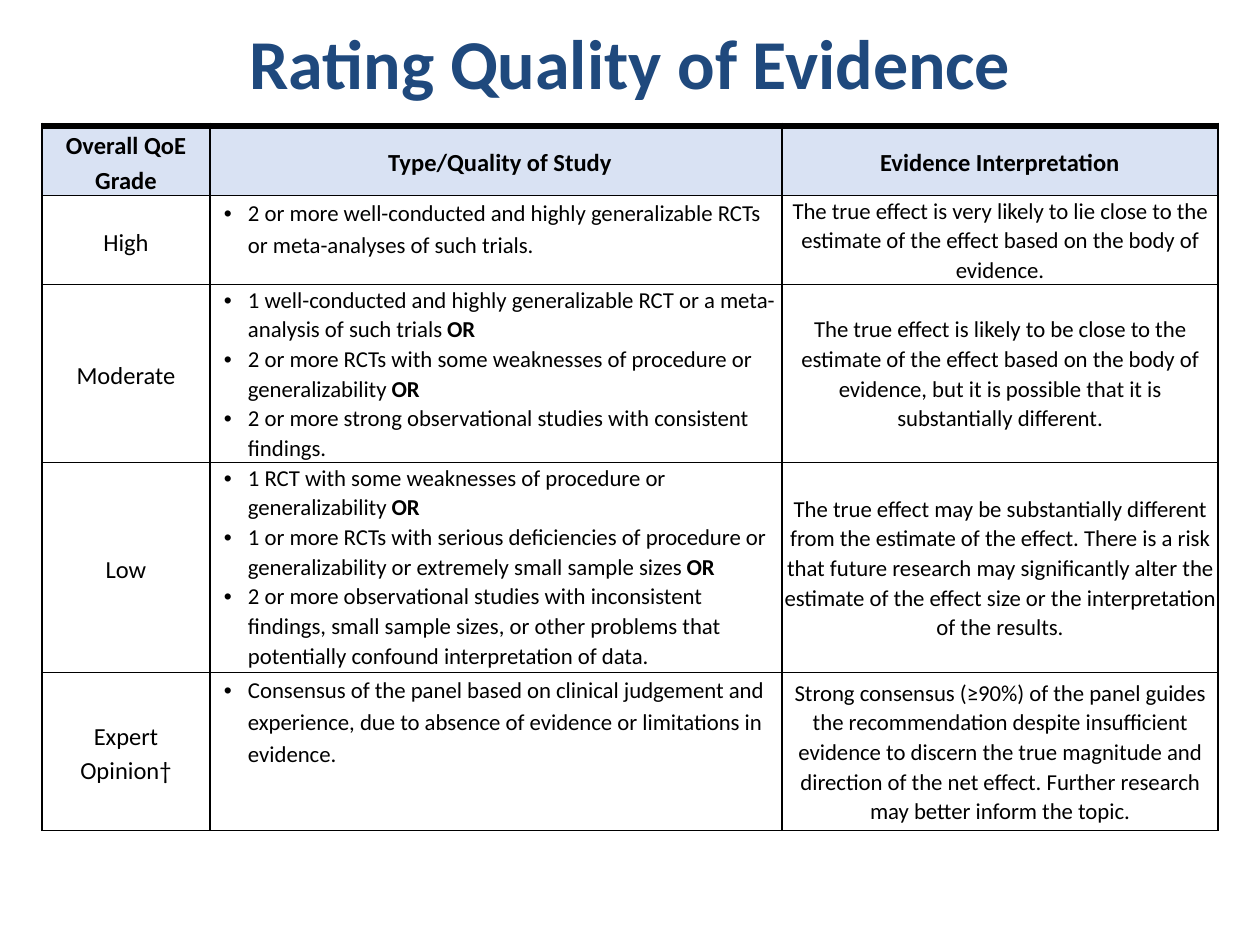
import pptx
import pptx.dml.color
import pptx.enum.text
import pptx.oxml.ns
import pptx.util
from lxml import etree

SCALE = 914400 / 126
FONT = "Calibri"
BLACK = pptx.dml.color.RGBColor(0, 0, 0)
WHITE = pptx.dml.color.RGBColor(255, 255, 255)
NAVY = pptx.dml.color.RGBColor(0x1F, 0x49, 0x7D)
PALE = pptx.dml.color.RGBColor(0xD9, 0xE2, 0xF3)
CENTER = pptx.enum.text.PP_ALIGN.CENTER
MIDDLE = pptx.enum.text.MSO_ANCHOR.MIDDLE
TOP = pptx.enum.text.MSO_ANCHOR.TOP

TITLE = "Rating Quality of Evidence"
HEADS = ["Overall QoE Grade", "Type/Quality of Study", "Evidence Interpretation"]
GRADES = [
    ("High",
     ["2 or more well-conducted and highly generalizable RCTs or meta-analyses of such trials."],
     "The true effect is very likely to lie close to the estimate of the effect based on "
     "the body of evidence."),
    ("Moderate",
     ["1 well-conducted and highly generalizable RCT or a meta-analysis of such trials OR",
      "2 or more RCTs with some weaknesses of procedure or generalizability OR",
      "2 or more strong observational studies with consistent findings."],
     "The true effect is likely to be close to the estimate of the effect based on the body "
     "of evidence, but it is possible that it is substantially different."),
    ("Low",
     ["1 RCT with some weaknesses of procedure or generalizability OR",
      "1 or more RCTs with serious deficiencies of procedure or generalizability or "
      "extremely small sample sizes OR",
      "2 or more observational studies with inconsistent findings, small sample sizes, or "
      "other problems that potentially confound interpretation of data."],
     "The true effect may be substantially different from the estimate of the effect. There "
     "is a risk that future research may significantly alter the estimate of the effect size "
     "or the interpretation of the results."),
    ("Expert Opinion†",
     ["Consensus of the panel based on clinical judgement and experience, due to absence of "
      "evidence or limitations in evidence."],
     "Strong consensus (≥90%) of the panel guides the recommendation despite insufficient "
     "evidence to discern the true magnitude and direction of the net effect. Further "
     "research may better inform the topic."),
]
COLS = [168, 572, 436]
ROWS = [66, 84, 170, 210, 158]


def px(n):
    """Turn px into EMU."""
    return pptx.util.Emu(round(n * SCALE))


def style(run, size, color=BLACK, bold=False):
    """Set the font of one run."""
    run.font.name = FONT
    run.font.size = pptx.util.Pt(size)
    run.font.bold = bold
    run.font.color.rgb = color


def edge(cell, side, width):
    """Draw one black border of a cell."""
    props = cell._tc.get_or_add_tcPr()
    line = etree.SubElement(props, pptx.oxml.ns.qn("a:ln" + side),
                            w=str(pptx.util.Pt(width)))
    fill = etree.SubElement(line, pptx.oxml.ns.qn("a:solidFill"))
    etree.SubElement(fill, pptx.oxml.ns.qn("a:srgbClr"), val=str(BLACK))


def frame(cell, fill, top, pads, anchor=MIDDLE):
    """Set the borders, fill, margins and anchor of a cell."""
    for side in "LRTB":
        edge(cell, side, top if side == "T" else 1)
    if fill is None:
        cell.fill.background()
    else:
        cell.fill.solid()
        cell.fill.fore_color.rgb = fill
    cell.margin_left = cell.margin_right = px(pads[0])
    cell.margin_top, cell.margin_bottom = px(pads[1]), 0
    cell.vertical_anchor = anchor


def label(cell, text, size, space, bold=False):
    """Write one centred paragraph in a cell."""
    para = cell.text_frame.paragraphs[0]
    para.text = text
    para.alignment = CENTER
    para.line_spacing = space
    style(para.runs[0], size, bold=bold)
    return para


def bullets(cell, items):
    """Write a bulleted list whose closing OR is bold."""
    body = cell.text_frame
    body.text = "\n".join(item.removesuffix("OR") for item in items)
    for para, item in zip(body.paragraphs, items):
        props = para._p.get_or_add_pPr()
        props.set("marL", str(px(38)))
        props.set("indent", str(px(-24)))
        etree.SubElement(props, pptx.oxml.ns.qn("a:buFont"), typeface="Arial")
        etree.SubElement(props, pptx.oxml.ns.qn("a:buChar"), char="•")
        para.line_spacing = 1.15 if len(items) == 1 else 1.07
        style(para.runs[0], 13)
        if item.endswith("OR"):
            run = para.add_run()
            run.text = "OR"
            style(run, 13, bold=True)


def title(slide, left, top, width, height):
    """Place the slide title."""
    body = slide.shapes.add_textbox(px(left), px(top), px(width), px(height)).text_frame
    body.word_wrap = True
    body.vertical_anchor = MIDDLE
    body.text = TITLE
    body.paragraphs[0].alignment = CENTER
    style(body.paragraphs[0].runs[0], 40, NAVY, True)


def grid(slide, left, top):
    """Place the table of evidence grades."""
    table = slide.shapes.add_table(len(ROWS), len(COLS), px(left), px(top),
                                   px(sum(COLS)), px(sum(ROWS))).table
    table.first_row = table.horz_banding = False
    for col, width in zip(table.columns, COLS):
        col.width = px(width)
    for row, height in zip(table.rows, ROWS):
        row.height = px(height)
    pads = [(9, 1), (0, 0), (0, 0)]
    for c, text in enumerate(HEADS):
        cell = table.cell(0, c)
        frame(cell, PALE, 4.5, pads[c])
        para = label(cell, text, 14, 1.15, True)
        if c == 1:
            para._p.get_or_add_pPr().set("marL", str(px(8)))
    for r, (grade, study, sense) in enumerate(GRADES, 1):
        fill = WHITE if r == len(GRADES) else None
        cells = [table.cell(r, c) for c in range(len(COLS))]
        for cell, pad, anchor in zip(cells, pads, (MIDDLE, TOP, MIDDLE)):
            frame(cell, fill, 4.5 if r == 0 else 1, pad, anchor)
        label(cells[0], grade, 14, 1.15)
        bullets(cells[1], study)
        label(cells[2], sense, 13, 1.07)


def main():
    """Build and save the slide."""
    deck = pptx.Presentation()
    deck.slide_width, deck.slide_height = px(1260), px(945)
    slide = deck.slides.add_slide(deck.slide_layouts[6])
    grid(slide, 42, 126)
    title(slide, 63, 13, 1134, 98)
    deck.save("out.pptx")


if __name__ == "__main__":
    main()
